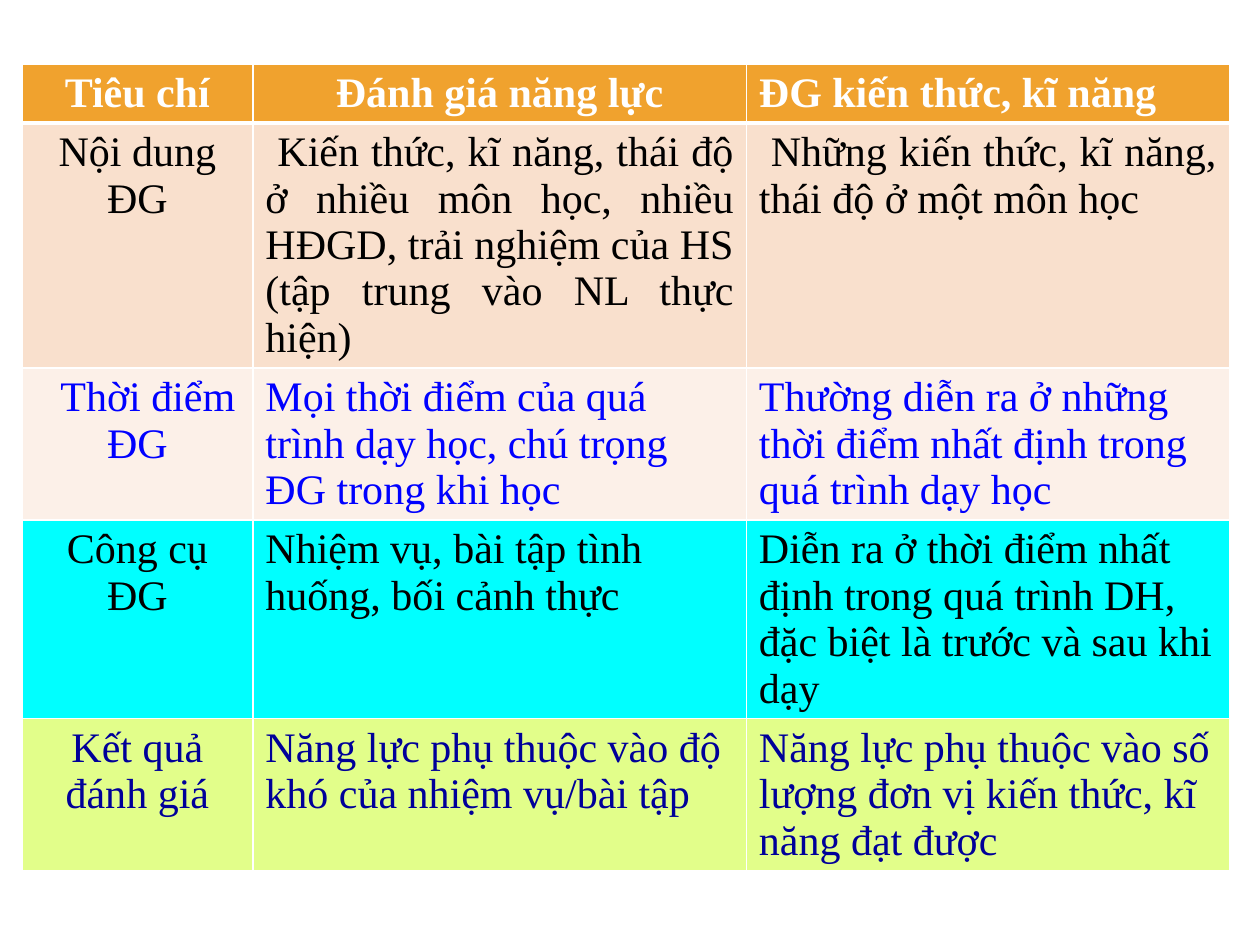
"""Build a slide with a table comparing two kinds of assessment."""
from dataclasses import dataclass

from lxml import etree
from pptx import Presentation
from pptx.dml.color import RGBColor
from pptx.enum.text import PP_ALIGN
from pptx.oxml.ns import qn
from pptx.util import Pt

LEFT, MID, JUST = PP_ALIGN.LEFT, PP_ALIGN.CENTER, PP_ALIGN.JUSTIFY


@dataclass(frozen=True)
class Theme:
    font: str = "Times New Roman"
    size: int = 24
    white: str = "FFFFFF"
    black: str = "000000"
    blue: str = "0000FF"
    navy: str = "000099"
    gold: str = "F0A22E"
    peach: str = "F9E0CD"
    cream: str = "FCF0E8"
    cyan: str = "00FFFF"
    lime: str = "E2FE8A"
    thin: int = 1
    thick: int = 3


THEME = Theme()
SIDE, TOP = 12.5, 36.5
COLS = (132, 282, 276)

ROWS = [
    dict(text=("Tiêu chí", "Đánh giá năng lực", "ĐG kiến thức, kĩ năng"),
         align=(MID, MID, JUST), fill=THEME.gold, ink=THEME.white, high=33),
    dict(text=("Nội dung ĐG",
               " Kiến thức, kĩ năng, thái độ ở nhiều môn học, nhiều HĐGD, "
               "trải nghiệm của HS (tập trung vào NL thực hiện)",
               " Những kiến thức, kĩ năng, thái độ ở một môn học"),
         align=(MID, JUST, JUST), fill=THEME.peach, ink=THEME.black, high=140),
    dict(text=("Thời điểm ĐG",
               "Mọi thời điểm của quá trình dạy học, chú trọng ĐG trong khi học",
               "Thường diễn ra ở những thời điểm nhất định trong quá trình dạy học"),
         align=(MID, LEFT, LEFT), fill=THEME.cream, ink=THEME.blue, high=87,
         indent=12),
    dict(text=("Công cụ ĐG",
               "Nhiệm vụ, bài tập tình huống, bối cảnh thực",
               "Diễn ra ở thời điểm nhất định trong quá trình DH, "
               "đặc biệt là trước và sau khi dạy"),
         align=(MID, LEFT, LEFT), fill=THEME.cyan, ink=THEME.black, high=113),
    dict(text=("Kết quả đánh giá",
               "Năng lực phụ thuộc vào độ khó của nhiệm vụ/bài tập",
               "Năng lực phụ thuộc vào số lượng đơn vị kiến thức, kĩ năng đạt được"),
         align=(MID, LEFT, LEFT), fill=THEME.lime, ink=THEME.navy, high=86),
]


def write(frame, text, *, ink, align, bold=False, indent=0):
    para = frame.paragraphs[0]
    para.alignment = align
    if indent:
        para._p.get_or_add_pPr().set("indent", str(Pt(indent)))
    run = para.add_run()
    run.text = text
    font = run.font
    font.name, font.size, font.bold = THEME.font, Pt(THEME.size), bold
    font.color.rgb = RGBColor.from_string(ink)


def edge(cell, **widths):
    props = cell._tc.get_or_add_tcPr()
    for side in "LRTB":
        line = etree.SubElement(props, qn(f"a:ln{side}"),
                                w=str(Pt(widths.get(side, THEME.thin))))
        fill = etree.SubElement(line, qn("a:solidFill"))
        etree.SubElement(fill, qn("a:srgbClr"), val=THEME.white)


def draw(slide):
    high = sum(row["high"] for row in ROWS)
    table = slide.shapes.add_table(len(ROWS), len(COLS), Pt(SIDE), Pt(TOP),
                                   Pt(sum(COLS)), Pt(high)).table
    for col, wide in zip(table.columns, COLS):
        col.width = Pt(wide)
    for r, row in enumerate(ROWS):
        table.rows[r].height = Pt(row["high"])
        rule = {0: {"B": THEME.thick}, 1: {"T": THEME.thick}}.get(r, {})
        for c, (text, align) in enumerate(zip(row["text"], row["align"])):
            cell = table.cell(r, c)
            edge(cell, **rule)
            cell.fill.solid()
            cell.fill.fore_color.rgb = RGBColor.from_string(row["fill"])
            write(cell.text_frame, text, ink=row["ink"], align=align,
                  bold=r == 0, indent=row.get("indent", 0) if c == 0 else 0)


def main():
    deck = Presentation()
    deck.slide_width, deck.slide_height = Pt(720), Pt(540)
    draw(deck.slides.add_slide(deck.slide_layouts[6]))
    deck.save("out.pptx")


if __name__ == "__main__":
    main()
